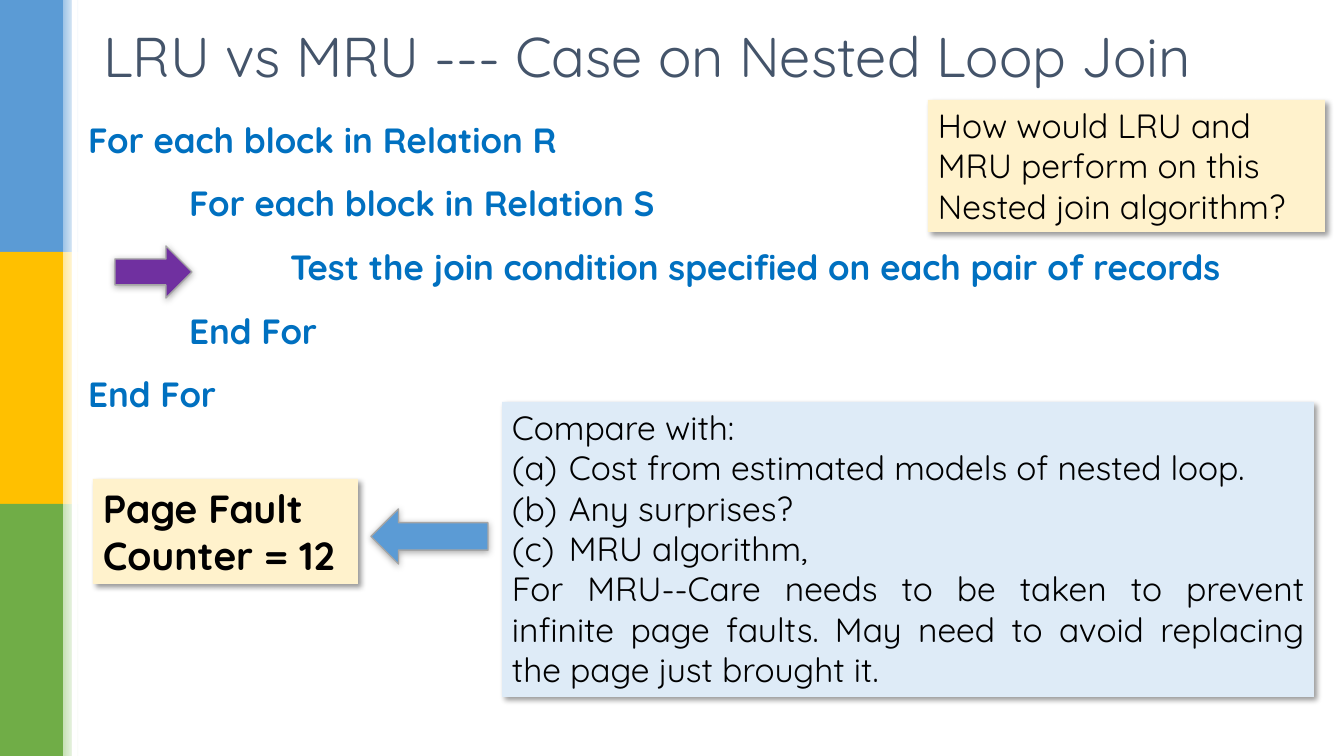
from dataclasses import dataclass

from lxml import etree
from pptx import Presentation
from pptx.dml.color import RGBColor
from pptx.enum.shapes import MSO_SHAPE
from pptx.enum.text import MSO_ANCHOR, MSO_AUTO_SIZE, PP_ALIGN
from pptx.oxml.ns import qn
from pptx.util import Emu, Pt

RECTANGLE = MSO_SHAPE.RECTANGLE
RIGHT_ARROW, LEFT_ARROW = MSO_SHAPE.RIGHT_ARROW, MSO_SHAPE.LEFT_ARROW
TOP, MIDDLE = MSO_ANCHOR.TOP, MSO_ANCHOR.MIDDLE
LEFT, JUSTIFY = PP_ALIGN.LEFT, PP_ALIGN.JUSTIFY
NO_FIT = MSO_AUTO_SIZE.NONE

PAGE_WIDTH, PAGE_HEIGHT = 1344, 756
EMU_PER_PX = 12192000 / PAGE_WIDTH


@dataclass(frozen=True)
class Theme:
    font: str = "Quicksand"
    title_size: int = 40
    code_size: int = 25
    note_size: int = 24
    counter_size: int = 28
    title: str = "44546A"
    code: str = "0070C0"
    text: str = "000000"
    white: str = "FFFFFF"
    cream: str = "FFF2CC"
    pale_blue: str = "DEEBF7"
    blue: str = "5B9BD5"
    purple: str = "7030A0"
    outline: str = "A5A5A5"
    # Each sidebar band: solid colour, then the start of its fading edge
    bands: tuple = (("5B9BD5", "9DC3E6"), ("FFC000", "FFE699"), ("70AD47", "C5E0B4"))


THEME = Theme()

# Shadows: opacity %, blur pt, distance pt, angle in degrees
NOTE_SHADOW = (40, 4, 3, 45)
ARROW_SHADOW = (32, 5, 1, 90)

JOIN_STEPS = [
    (0, "For each block in Relation R"),
    (1, "For each block in Relation S"),
    (2, "Test the join condition specified on each pair of records"),
    (1, "End For"),
    (0, "End For"),
]
COMPARISONS = [
    (False, "Compare with:"),
    (True, "Cost from estimated models of nested loop."),
    (True, "Any surprises?"),
    (True, "MRU algorithm,"),
    (False, "For MRU--Care needs to be taken to prevent infinite page faults. "
            "May need to avoid replacing the page just brought it."),
]


def px(length):
    return Emu(round(length * EMU_PER_PX))


def rgb(colour):
    return RGBColor.from_string(colour)


def add_run(para, text, size, colour=THEME.text, bold=False):
    span = para.add_run()
    span.text = text
    span.font.name = THEME.font
    span.font.size = Pt(size)
    span.font.bold = bold
    span.font.color.rgb = rgb(colour)


def set_bullet(para, tag, margin, indent=0, **attributes):
    properties = para._p.get_or_add_pPr()
    properties.set("marL", str(px(margin)))
    properties.set("indent", str(px(indent)))
    etree.SubElement(properties, qn(tag), **attributes)


def next_para(frame, index):
    return frame.add_paragraph() if index else frame.paragraphs[0]


def place(shape, box):
    shape.left, shape.top, shape.width, shape.height = map(px, box)


def add_box(page, kind, box, fill, outline=None, shadow=None):
    shape = page.shapes.add_shape(kind, *map(px, box))
    shape.shadow.inherit = False
    shape.fill.solid()
    shape.fill.fore_color.rgb = rgb(fill)
    if outline:
        shape.line.color.rgb = rgb(outline)
        shape.line.width = Pt(1)
    else:
        shape.line.fill.background()
    if shadow:
        opacity, blur, distance, angle = shadow
        effects = shape._element.spPr.find(qn("a:effectLst"))
        outer = etree.SubElement(
            effects, qn("a:outerShdw"), blurRad=str(Pt(blur)), dist=str(Pt(distance)),
            dir=str(angle * 60000), algn="tl", rotWithShape="0")
        colour = etree.SubElement(outer, qn("a:srgbClr"), val=THEME.text)
        etree.SubElement(colour, qn("a:alpha"), val=str(opacity * 1000))
    return shape


def add_note(page, box, fill):
    frame = add_box(page, RECTANGLE, box, fill, shadow=NOTE_SHADOW).text_frame
    frame.word_wrap = True
    frame.vertical_anchor = TOP
    return frame


def add_arrow(page, kind, box, fill):
    add_box(page, kind, box, fill, THEME.outline, ARROW_SHADOW)


def draw_sidebar(page, box):
    left, top, width, height = box
    solid, fade = 63, 16
    band_height = height // len(THEME.bands)
    for index, (colour, tint) in enumerate(THEME.bands):
        y = top + index * band_height
        add_box(page, RECTANGLE, (left, y, solid, band_height), colour)
        edge = add_box(page, RECTANGLE, (left + solid, y, fade, band_height), tint)
        edge.fill.gradient()
        edge.fill.gradient_angle = 0
        for stop, stop_colour in zip(edge.fill.gradient_stops, (tint, THEME.white)):
            stop.color.rgb = rgb(stop_colour)
    # White strip that trims the fading edge
    add_box(page, RECTANGLE, (left + width - 7, top, 5, height), THEME.white)


def draw_title(page, box):
    title = page.shapes.title
    place(title, box)
    frame = title.text_frame
    frame.auto_size = NO_FIT
    frame.vertical_anchor = MIDDLE
    para = frame.paragraphs[0]
    para.alignment = LEFT
    add_run(para, "LRU vs MRU --- Case on Nested Loop Join", THEME.title_size, THEME.title)


def draw_algorithm(page, box):
    body = page.placeholders[1]
    place(body, box)
    frame = body.text_frame
    frame.auto_size = NO_FIT
    for index, (depth, step) in enumerate(JOIN_STEPS):
        para = next_para(frame, index)
        para.line_spacing = 0.9
        para.space_before = Pt(6.5 if index else 0)
        para.space_after = Pt(12)
        set_bullet(para, "a:buNone", depth * 101)
        add_run(para, step, THEME.code_size, THEME.code, bold=True)
    # Pointer to the innermost step
    left, top = box[:2]
    add_arrow(page, RIGHT_ARROW, (left + 37, top + 128, 77, 52), THEME.purple)


def draw_question(page, box):
    para = add_note(page, box, THEME.cream).paragraphs[0]
    para.alignment = LEFT
    add_run(para, "How would LRU and MRU perform on this Nested join algorithm?",
            THEME.note_size)


def draw_counter(page, box):
    para = add_note(page, box, THEME.cream).paragraphs[0]
    para.alignment = LEFT
    add_run(para, "Page Fault Counter = 12", THEME.counter_size, bold=True)


def draw_comparison(page, box):
    frame = add_note(page, box, THEME.pale_blue)
    for index, (numbered, text) in enumerate(COMPARISONS):
        para = next_para(frame, index)
        para.alignment = JUSTIFY
        if numbered:
            set_bullet(para, "a:buAutoNum", 57, -57, type="alphaLcParenBoth")
        add_run(para, text, THEME.note_size)
    # Arrow towards the counter
    left, top = box[:2]
    add_arrow(page, LEFT_ARROW, (left - 131, top + 107, 117, 55), THEME.blue)


def main():
    deck = Presentation()
    deck.slide_width, deck.slide_height = px(PAGE_WIDTH), px(PAGE_HEIGHT)
    page = deck.slides.add_slide(deck.slide_layouts[1])
    draw_sidebar(page, (0, 0, 79, PAGE_HEIGHT))
    draw_title(page, (93, 12, 1159, 87))
    draw_algorithm(page, (78, 118, 1189, 310))
    draw_question(page, (928, 100, 397, 132))
    draw_counter(page, (93, 479, 265, 105))
    draw_comparison(page, (502, 402, 812, 295))
    deck.save("out.pptx")


if __name__ == "__main__":
    main()
